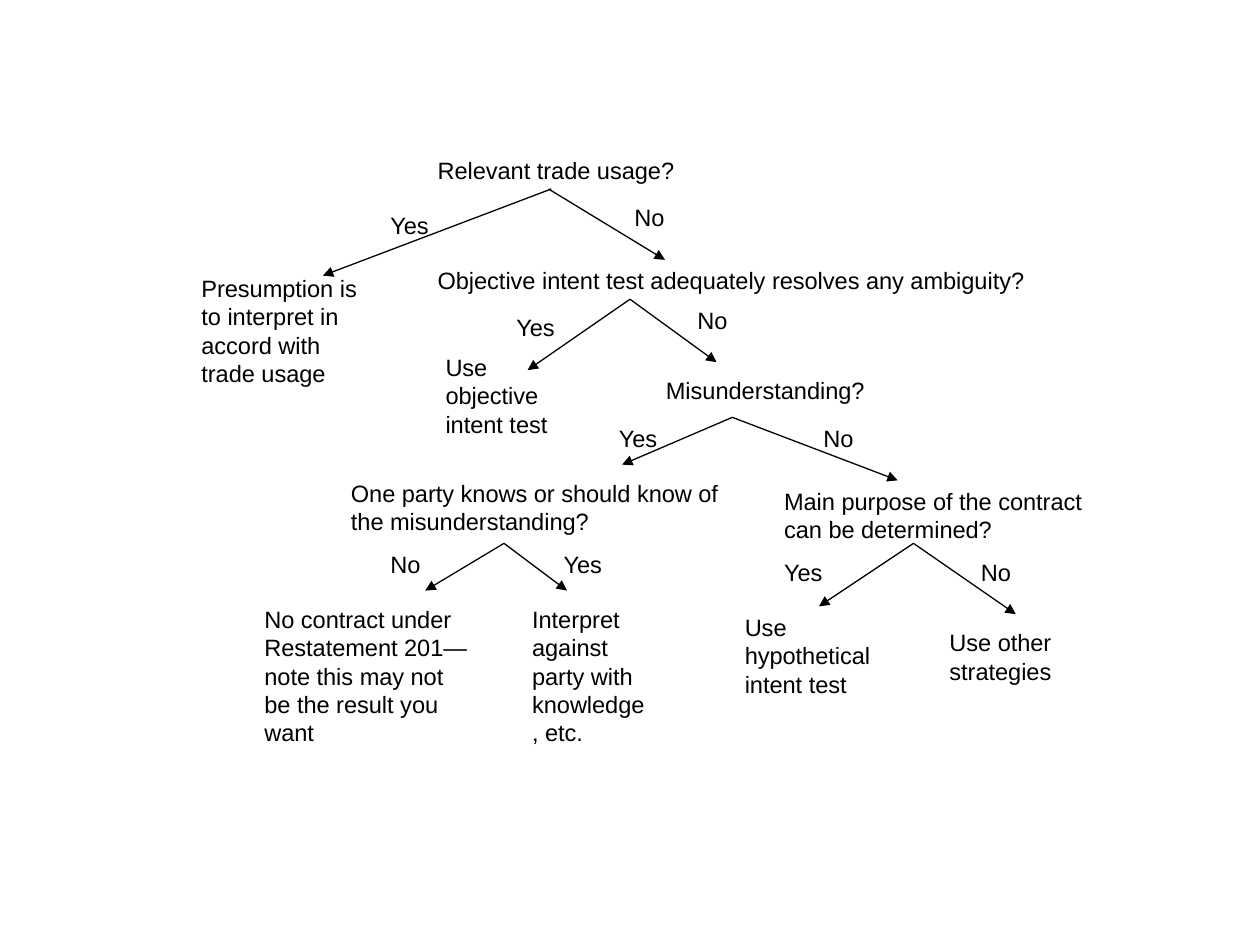
from lxml.etree import SubElement
from pptx import Presentation
from pptx.dml.color import RGBColor
from pptx.enum.shapes import MSO_CONNECTOR as Connector
from pptx.enum.text import MSO_AUTO_SIZE as AutoSize
from pptx.oxml.ns import qn
from pptx.util import Pt

BLACK = RGBColor(0, 0, 0)
FONT, FONT_SIZE, LINE_HEIGHT = "Arial", 13.5, 16.2

deck = Presentation()
deck.slide_width, deck.slide_height = Pt(720), Pt(540)
page = deck.slides.add_slide(deck.slide_layouts[6])


def add_text(text, left, top, width, lines=1, size=FONT_SIZE, color=BLACK):
    height = lines * LINE_HEIGHT + 7.2
    box = page.shapes.add_textbox(Pt(left), Pt(top), Pt(width), Pt(height))
    frame = box.text_frame
    frame.word_wrap = True
    frame.auto_size = AutoSize.SHAPE_TO_FIT_TEXT
    para = frame.paragraphs[0]
    para.line_spacing = Pt(LINE_HEIGHT)
    span = para.add_run()
    span.text = text
    span.font.name = FONT
    span.font.size = Pt(size)
    span.font.color.rgb = color


# Questions and outcomes: text, left, top, width, lines
nodes = [
    ("Relevant trade usage?", 243, 85.5, 153, 1),
    ("Presumption is to interpret in accord with trade usage", 108, 153, 103.5, 4),
    ("Objective intent test adequately resolves any ambiguity?", 243, 148.5, 373.5, 1),
    ("Use objective intent test", 247.5, 198, 90, 3),
    ("Misunderstanding?", 373.5, 211.5, 144, 1),
    ("One party knows or should know of the misunderstanding?", 193.5, 270, 225, 2),
    ("No contract under Restatement 201—note this may not be the result you want",
     144, 342, 135, 5),
    ("Interpret against party with knowledge, etc.", 297, 342, 81, 5),
    ("Main purpose of the contract can be determined?", 441, 274.5, 189, 2),
    ("Use hypothetical intent test", 418.5, 346.5, 99, 3),
    ("Use other strategies", 535.5, 355.5, 81, 2),
]
for text, left, top, width, lines in nodes:
    add_text(text, left, top, width, lines=lines)

# Branches: arrow start, arrow end, answer, answer position
branches = [
    ((315, 108), (184.5, 157.5), "Yes", (216, 117)),
    ((313.5, 108), (380, 148.5), "No", (355.5, 112.5)),
    ((360, 171), (301.5, 211.5), "Yes", (288, 175.5)),
    ((360, 171), (409.5, 207), "No", (391.5, 171)),
    ((418.5, 238.5), (355.5, 265.5), "Yes", (346.5, 238.5)),
    ((418.5, 238.5), (513, 274.5), "No", (463.5, 238.5)),
    ((288, 310.5), (243, 337.5), "No", (216, 310.5)),
    ((288, 310.5), (324, 337.5), "Yes", (315, 310.5)),
    ((522, 310.5), (468, 346.5), "Yes", (441, 315)),
    ((522, 310.5), (580.5, 351), "No", (553.5, 315)),
]
for start, end, answer, (left, top) in branches:
    arrow = page.shapes.add_connector(Connector.STRAIGHT, *map(Pt, start + end))
    arrow.line.color.rgb = BLACK
    arrow.line.width = Pt(0.75)
    SubElement(arrow.line._get_or_add_ln(), qn("a:tailEnd"), type="triangle")
    SubElement(arrow._element.spPr, qn("a:effectLst"))
    add_text(answer, left, top, 54 if answer == "Yes" else 36)

deck.save("out.pptx")
